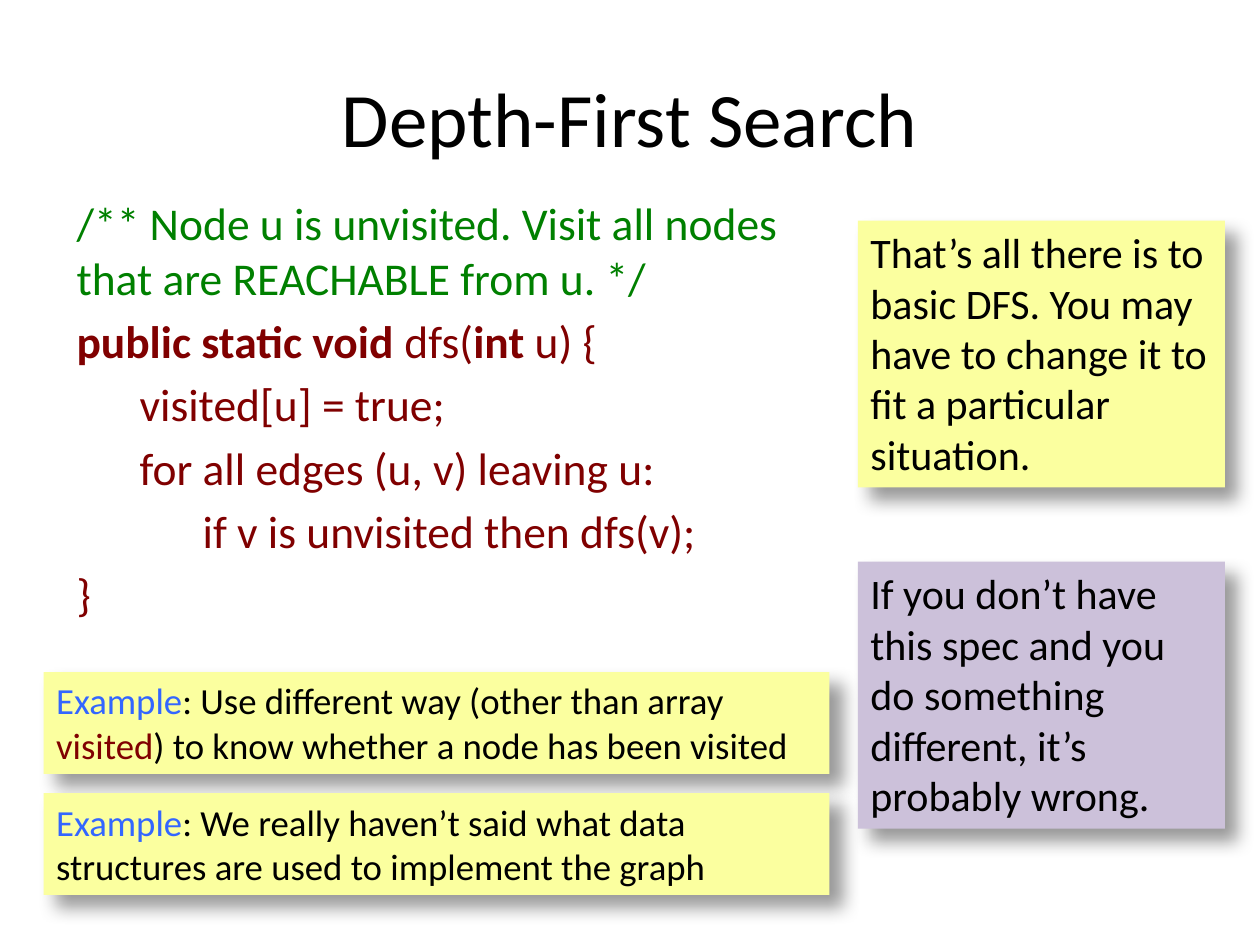
"""Builds the slide on depth-first search."""
from lxml import etree
from pptx import Presentation
from pptx.dml.color import RGBColor
from pptx.enum.shapes import MSO_SHAPE
from pptx.enum.text import MSO_ANCHOR, MSO_AUTO_SIZE, PP_ALIGN
from pptx.util import Pt

RECT = MSO_SHAPE.RECTANGLE
TOP, MIDDLE = MSO_ANCHOR.TOP, MSO_ANCHOR.MIDDLE
LEFT, CENTER = PP_ALIGN.LEFT, PP_ALIGN.CENTER
GROW = MSO_AUTO_SIZE.SHAPE_TO_FIT_TEXT

BLACK, GREEN, MAROON, BLUE = "000000", "008000", "800000", "3366FF"
YELLOW, LILAC = "FBFF9F", "CCC1DA"
FONT, TAB = "Calibri", 36

TITLE = "Depth-First Search"
CODE = [
    (0, [("/** Node u is unvisited. Visit all nodes that are REACHABLE from u. */", GREEN)]),
    (0, [("public static void ", MAROON, True), ("dfs(", MAROON),
         ("int", MAROON, True), (" u) {", MAROON)]),
    (1, [("visited[u] = true;", MAROON)]),
    (1, [("for all edges (u, v) leaving u:", MAROON)]),
    (2, [("if v is unvisited then dfs(v);", MAROON)]),
    (0, [("}", MAROON)]),
]
HINTS = [
    [("Example", BLUE), (": Use different way (other than array ", BLACK),
     ("visited", MAROON), (") to know whether a node has been visited", BLACK)],
    [("Example", BLUE),
     (": We really haven’t said what data structures are used to implement the graph", BLACK)],
]
NOTES = [
    ("That’s all there is to basic DFS. You may have to change it to fit a particular situation.",
     YELLOW),
    ("If you don’t have this spec and you do something different, it’s probably wrong.", LILAC),
]
SHADOW = """<a:effectLst xmlns:a="http://schemas.openxmlformats.org/drawingml/2006/main">
<a:outerShdw blurRad="127000" dist="127000" dir="2700000" algn="tl" rotWithShape="0">
<a:srgbClr val="000000"><a:alpha val="40000"/></a:srgbClr></a:outerShdw></a:effectLst>"""


def color(code):
    """Turns a hex string into a colour."""
    return RGBColor.from_string(code)


def write(shape, lines, size, align=LEFT, anchor=TOP, before=0):
    """Fills a shape with (level, runs) lines."""
    frame = shape.text_frame
    frame.word_wrap = True
    frame.vertical_anchor = anchor
    for i, (level, runs) in enumerate(lines):
        para = frame.paragraphs[0] if i == 0 else frame.add_paragraph()
        para.alignment = align
        para.space_before = Pt(before)
        para._p.get_or_add_pPr().set("marL", str(Pt(level * TAB)))
        for text, tint, *bold in runs:
            run = para.add_run()
            run.text = text
            font = run.font
            font.name, font.size, font.bold = FONT, Pt(size), bool(bold)
            font.color.rgb = color(tint)


def card(slide, box, fill, runs, size, before=0):
    """Draws a filled box with a shadow and one paragraph."""
    shape = slide.shapes.add_shape(RECT, *map(Pt, box))
    shape.fill.solid()
    shape.fill.fore_color.rgb = color(fill)
    shape.line.fill.background()
    shape._element.spPr.append(etree.fromstring(SHADOW))
    write(shape, [(0, runs)], size, before=before)
    shape.text_frame.auto_size = GROW


def main():
    """Places every part and saves the file."""
    deck = Presentation()
    deck.slide_width, deck.slide_height = Pt(720), Pt(540)
    slide = deck.slides.add_slide(deck.slide_layouts[6])
    title = slide.shapes.add_textbox(Pt(36), Pt(21.6), Pt(648), Pt(90))
    write(title, [(0, [(TITLE, BLACK)])], 44, align=CENTER, anchor=MIDDLE)
    code = slide.shapes.add_textbox(Pt(36.7), Pt(108), Pt(438), Pt(302))
    write(code, CODE, 26, before=5)
    for i, runs in enumerate(HINTS):
        card(slide, (25, 384 + 69.2 * i, 449, 58.2), YELLOW, runs, 21, before=12)
    for i, (text, fill) in enumerate(NOTES):
        card(slide, (490.3, 126 + 195 * i, 209.7, 152.6), fill, [(text, BLACK)], 24)
    deck.save("out.pptx")


if __name__ == "__main__":
    main()
